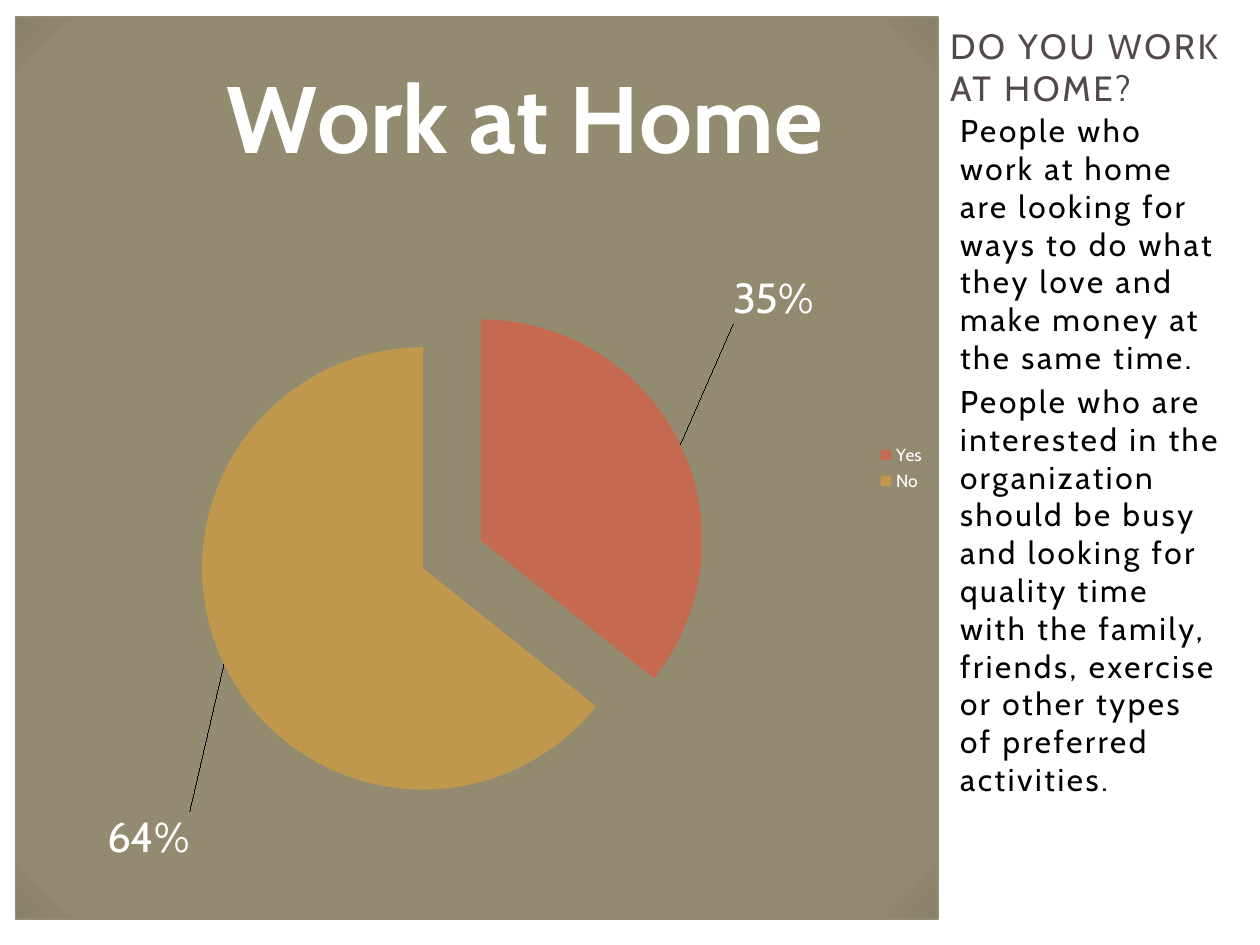
from lxml import etree
from pptx import Presentation
from pptx.chart.data import CategoryChartData
from pptx.dml.color import RGBColor
from pptx.enum.chart import XL_CHART_TYPE, XL_LABEL_POSITION, XL_LEGEND_POSITION
from pptx.enum.shapes import MSO_SHAPE
from pptx.enum.text import MSO_ANCHOR, MSO_AUTO_SIZE, PP_ALIGN
from pptx.oxml import parse_xml
from pptx.oxml.ns import qn
from pptx.util import Cm, Pt

PIE = XL_CHART_TYPE.PIE
OUTSIDE = XL_LABEL_POSITION.OUTSIDE_END
RIGHT = XL_LEGEND_POSITION.RIGHT
RECT = MSO_SHAPE.RECTANGLE
TOP, BOTTOM = MSO_ANCHOR.TOP, MSO_ANCHOR.BOTTOM
NO_FIT = MSO_AUTO_SIZE.NONE
LEFT = PP_ALIGN.LEFT

FONT = "Cabin"
COLORS = {"white": "FFFFFF", "black": "000000", "heading": "534949",
          "panel": "928B70", "panel_edge": "888268",
          "yes": "C66951", "no": "BF974D"}
EXPLOSION = 23
# answer, value, label, colour, explosion, label offset (share of the chart)
ANSWERS = [("Yes", 5, "35%", "yes", EXPLOSION, (0.05, -0.13)),
           ("No", 9, "64%", "no", 6, (-0.03, 0.16))]
BODY = [
    "People who work at home are looking for ways to do what they love "
    "and make money at the same time.",
    "People who are interested in the organization should be busy and "
    "looking for quality time with the family, friends, exercise or other "
    "types of preferred activities.",
]


def rgb(name):
    return RGBColor.from_string(COLORS[name])


def set_font(font, size, color, bold=False):
    font.name, font.size, font.bold = FONT, Pt(size), bold
    font.color.rgb = rgb(color)


def chart_node(tag, val=None):
    node = etree.Element(qn("c:" + tag))
    if val is not None:
        node.set("val", str(val))
    return node


def set_layout(parent, index, **values):
    """Give a chart part a manual layout, as shares of the chart."""
    for old in parent.findall(qn("c:layout")):
        parent.remove(old)
    layout = chart_node("layout")
    manual = chart_node("manualLayout")
    layout.append(manual)
    for tag, val in values.items():
        manual.append(chart_node(tag, val))
    parent.insert(index, layout)


def fill_chart(space):
    stops = "".join(
        f'<a:gs pos="{pos}"><a:srgbClr val="{COLORS[name]}"/></a:gs>'
        for pos, name in [(0, "panel"), (90000, "panel"), (100000, "panel_edge")])
    sppr = parse_xml(
        '<c:spPr xmlns:c="http://schemas.openxmlformats.org/drawingml/2006/chart"'
        ' xmlns:a="http://schemas.openxmlformats.org/drawingml/2006/main">'
        f'<a:gradFill><a:gsLst>{stops}</a:gsLst><a:path path="circle">'
        '<a:fillToRect l="100000" t="100000" r="100000" b="100000"/></a:path>'
        '</a:gradFill><a:ln w="10000"><a:solidFill>'
        f'<a:srgbClr val="{COLORS["panel"]}"/></a:solidFill></a:ln></c:spPr>')
    space.find(qn("c:chart")).addnext(sppr)


def add_pie(s):
    data = CategoryChartData()
    data.categories = [a[0] for a in ANSWERS]
    data.add_series("Series 1", [a[1] for a in ANSWERS])
    chart = s.shapes.add_chart(PIE, Cm(0.3), Cm(0.33), Cm(18.62), Cm(18.21),
                               data).chart
    set_font(chart.font, 10, "white")
    space = chart._chartSpace
    fill_chart(space)

    # Title and legend
    chart.has_title = True
    p = chart.chart_title.text_frame.paragraphs[0]
    p.text = "Work at Home"
    set_font(p.font, 54, "white", bold=True)
    set_layout(space.find(".//" + qn("c:title")), 1,
               xMode="edge", yMode="edge", x=0.21, y=0.02)
    chart.has_legend = True
    chart.legend.position = RIGHT
    chart.legend.include_in_layout = False

    # Slices and their labels
    plot = chart.plots[0]
    plot.vary_by_categories = True
    series = plot.series[0]
    series.data_labels.show_value = True
    for i, (_, _, label, color, _, _) in enumerate(ANSWERS):
        point = series.points[i]
        point.format.fill.solid()
        point.format.fill.fore_color.rgb = rgb(color)
        p = point.data_label.text_frame.paragraphs[0]
        p.text = label
        set_font(p.runs[0].font, 24, "white")
        point.data_label.position = OUTSIDE
    ser = series._element
    ser.find(qn("c:dPt")).addprevious(chart_node("explosion", EXPLOSION))
    slices = zip(ANSWERS, ser.findall(qn("c:dPt")), ser.iter(qn("c:dLbl")))
    for (*_, explosion, (dx, dy)), dpt, dlbl in slices:
        dpt.find(qn("c:spPr")).addprevious(chart_node("explosion", explosion))
        set_layout(dlbl, 1, x=dx, y=dy)
    set_layout(space.find(".//" + qn("c:plotArea")), 0, layoutTarget="inner",
               xMode="edge", yMode="edge", x=0.16, y=0.3, w=0.59, h=0.61)


def fill_placeholder(sp, box, texts, size, color, anchor):
    sp.left, sp.top, sp.width, sp.height = [Cm(v) for v in box]
    tf = sp.text_frame
    tf.word_wrap, tf.auto_size, tf.vertical_anchor = True, NO_FIT, anchor
    for i, text in enumerate(texts):
        p = tf.paragraphs[0] if i == 0 else tf.add_paragraph()
        p.text, p.alignment = text, LEFT
        p.space_before = Pt(3.6 if i else 0)
        set_font(p.font, size, color)
        p.runs[0]._r.get_or_add_rPr().set("spc", "150")
        ppr = p._p.get_or_add_pPr()
        ppr.set("marL", "0")
        ppr.set("indent", "0")
        ppr.find(qn("a:defRPr")).addprevious(etree.Element(qn("a:buNone")))
    return tf


def main():
    prs = Presentation()
    prs.slide_width, prs.slide_height = Cm(25.4), Cm(19.05)
    s = prs.slides.add_slide(prs.slide_layouts[1])

    # White side panel
    sp = s.shapes.add_shape(RECT, Cm(19.48), Cm(0.43), Cm(5.51), Cm(18.21))
    sp.shadow.inherit = False
    sp.fill.solid()
    sp.fill.fore_color.rgb = rgb("white")
    sp.line.fill.background()
    s.shapes._spTree.insert(2, sp._element)

    add_pie(s)

    # Question and explanation
    fill_placeholder(s.shapes.title, (18.9, 0.2, 6.8, 2.11),
                     ["DO YOU WORK AT HOME?"], 20, "heading", BOTTOM)
    tf = fill_placeholder(s.placeholders[1], (19.1, 2.24, 5.79, 16.2),
                          BODY, 18, "black", TOP)
    tf.margin_top = 0

    prs.save("out.pptx")


if __name__ == "__main__":
    main()
